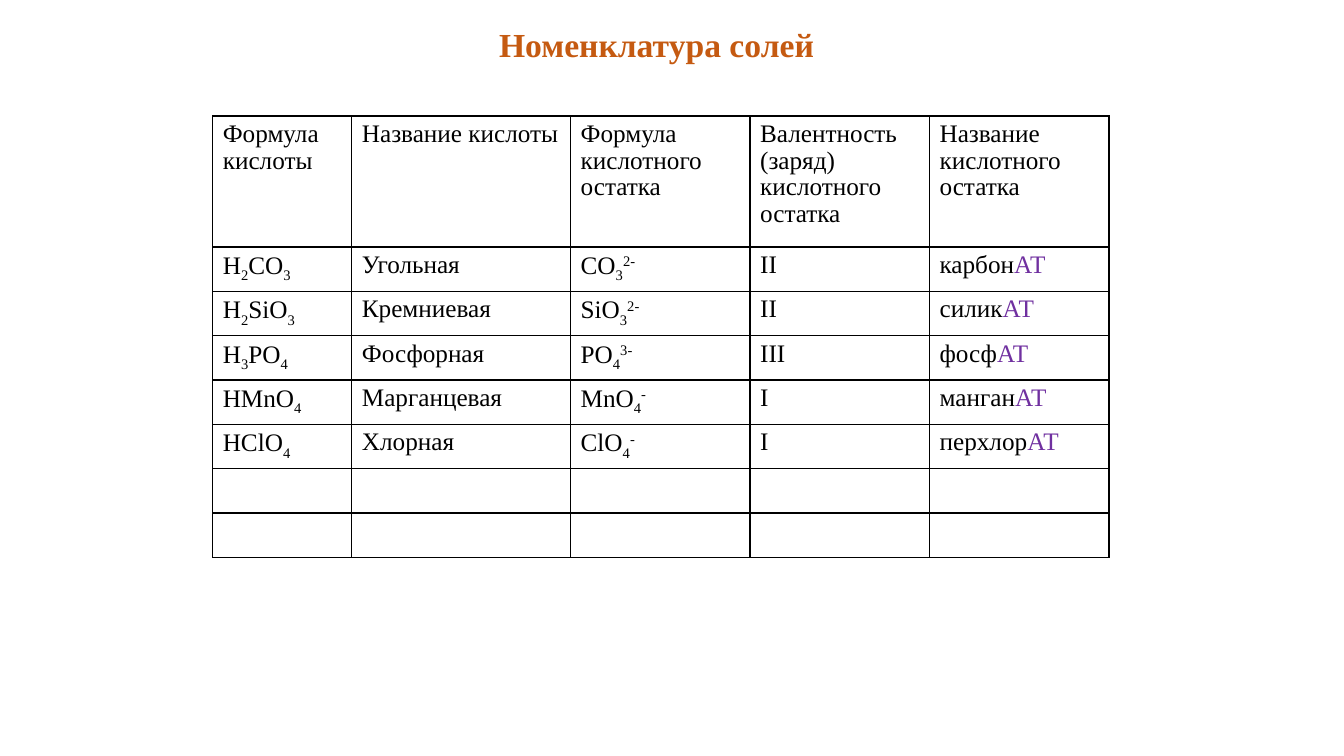
from lxml import etree
from pptx import Presentation
from pptx.dml.color import RGBColor
from pptx.enum.text import MSO_ANCHOR, MSO_AUTO_SIZE, PP_ALIGN
from pptx.oxml.ns import qn
from pptx.util import Inches, Pt

TOP = MSO_ANCHOR.TOP
LEFT = PP_ALIGN.LEFT
NO_AUTOFIT = MSO_AUTO_SIZE.NONE
TITLE_ONLY = 5

COLORS = {"title": "C55A11", "text": "000000", "suffix": "7030A0", "border": "000000"}

# "|" separates runs; a leading mark sets the run's baseline or colour.
MARKS = {
    "_": {"baseline": -25000},
    "^": {"baseline": 30000},
    "*": {"color": "suffix"},
}

COLUMN_WIDTHS = [1.38, 2.17, 1.78, 1.78, 1.78]
HEADER_HEIGHT = 1.3
ROW_HEIGHT = 0.44
SALTS = [
    ["Формула кислоты", "Название кислоты", "Формула кислотного остатка",
     "Валентность (заряд) кислотного остатка", "Название кислотного остатка"],
    ["H|_2|CO|_3", "Угольная", "CO|_3|^2-", "II", "карбон|*АТ"],
    ["H|_2|SiO|_3", "Кремниевая", "SiO|_3|^2-", "II", "силик|*АТ"],
    ["H|_3|PO|_4", "Фосфорная", "PO|_4|^3-", "III", "фосф|*АТ"],
    ["HMnO|_4", "Марганцевая", "MnO|_4|^-", "I", "манган|*АТ"],
    ["HClO|_4", "Хлорная", "ClO|_4|^-", "I", "перхлор|*АТ"],
    [""] * 5,
    [""] * 5,
]


def add_run(paragraph, text, font="Times New Roman", size=18, color="text",
            bold=False, baseline=None):
    run = paragraph.add_run()
    run.text = text
    run.font.name = font
    run.font.size = Pt(size)
    run.font.bold = bold
    run.font.color.rgb = RGBColor.from_string(COLORS[color])
    if baseline is not None:
        run.font._element.set("baseline", str(baseline)) if hasattr(
            run.font, "_element") else run._r.get_or_add_rPr().set("baseline", str(baseline))


class SlideBuilder:
    """Holds the style and the current slide and adds its elements."""

    def __init__(self, presentation):
        self.slide = presentation.slides.add_slide(presentation.slide_layouts[TITLE_ONLY])
        self.line_spacing = 0.96
        self.border_width = Pt(1)

    def title(self, text, left, top, width, height):
        shape = self.slide.shapes.title
        shape.left, shape.top = Inches(left), Inches(top)
        shape.width, shape.height = Inches(width), Inches(height)
        frame = shape.text_frame
        frame.word_wrap = True
        frame.auto_size = NO_AUTOFIT
        frame.vertical_anchor = TOP
        paragraph = frame.paragraphs[0]
        paragraph.alignment = LEFT
        add_run(paragraph, text, size=24, color="title", bold=True)

    def border(self, cell):
        properties = cell._tc.get_or_add_tcPr()
        for index, side in enumerate(("a:lnL", "a:lnR", "a:lnT", "a:lnB")):
            line = etree.Element(qn(side), w=str(self.border_width))
            fill = etree.SubElement(line, qn("a:solidFill"))
            etree.SubElement(fill, qn("a:srgbClr"), val=COLORS["border"])
            properties.insert(index, line)

    def cell(self, cell, text):
        cell.fill.background()
        self.border(cell)
        paragraph = cell.text_frame.paragraphs[0]
        paragraph.line_spacing = self.line_spacing
        paragraph.font.size = Pt(18)
        for piece in filter(None, text.split("|")):
            style = MARKS.get(piece[0], {})
            add_run(paragraph, piece[1:] if style else piece, **style)

    def table(self, rows, widths, left, top):
        heights = [HEADER_HEIGHT] + [ROW_HEIGHT] * (len(rows) - 1)
        table = self.slide.shapes.add_table(
            len(rows), len(widths), Inches(left), Inches(top),
            Inches(sum(widths)), Inches(sum(heights))).table
        table.first_row = False
        table.horz_banding = False
        for column, width in zip(table.columns, widths):
            column.width = Inches(width)
        for row, height, texts in zip(table.rows, heights, rows):
            row.height = Inches(height)
            for cell, text in zip(row.cells, texts):
                self.cell(cell, text)


def main():
    presentation = Presentation()
    presentation.slide_width = Inches(13.33)
    presentation.slide_height = Inches(7.5)
    builder = SlideBuilder(presentation)
    builder.title("Номенклатура солей", 4.85, 0.19, 3.62, 0.5)
    builder.table(SALTS, COLUMN_WIDTHS, 2.11, 1.15)
    presentation.save("out.pptx")


if __name__ == "__main__":
    main()
